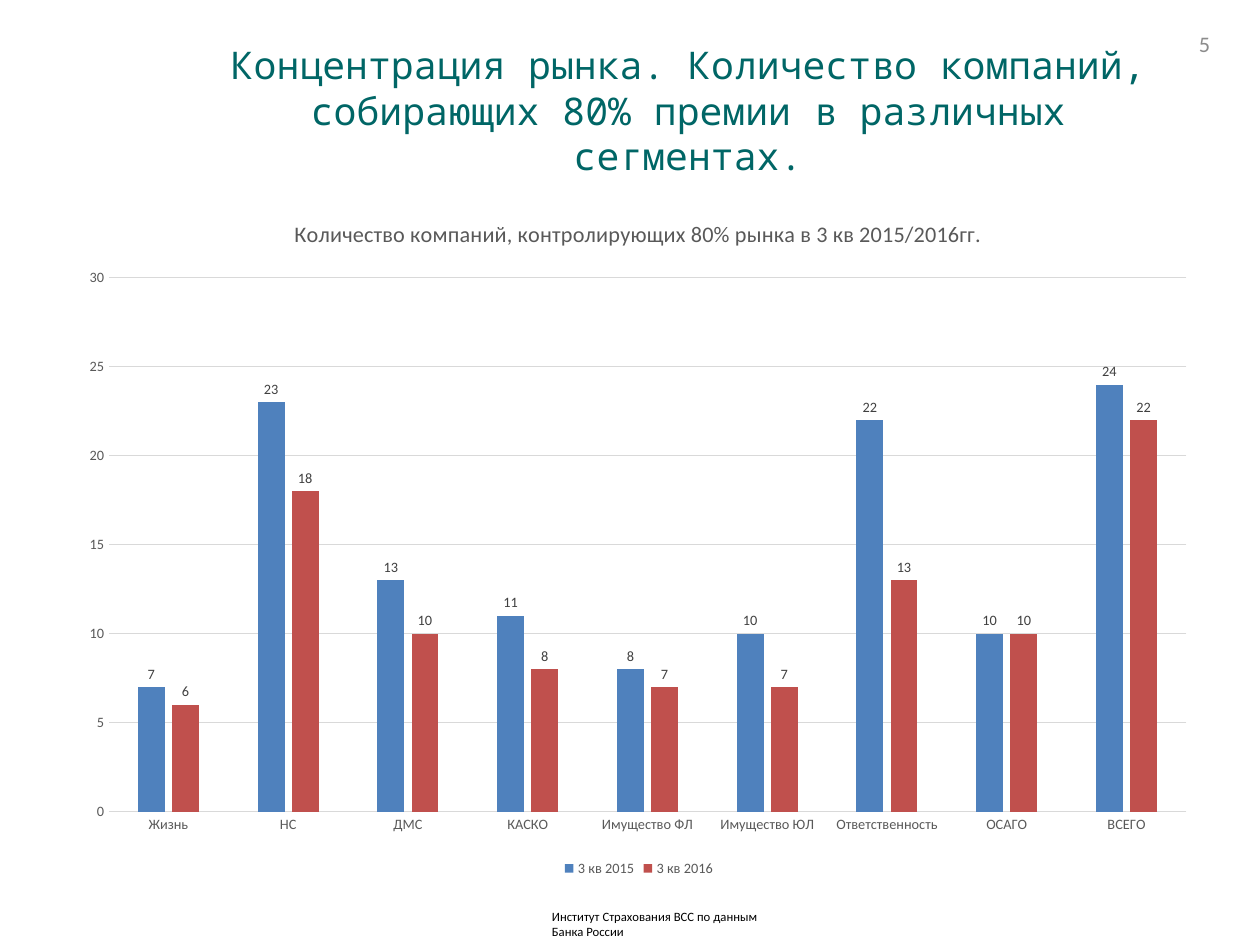
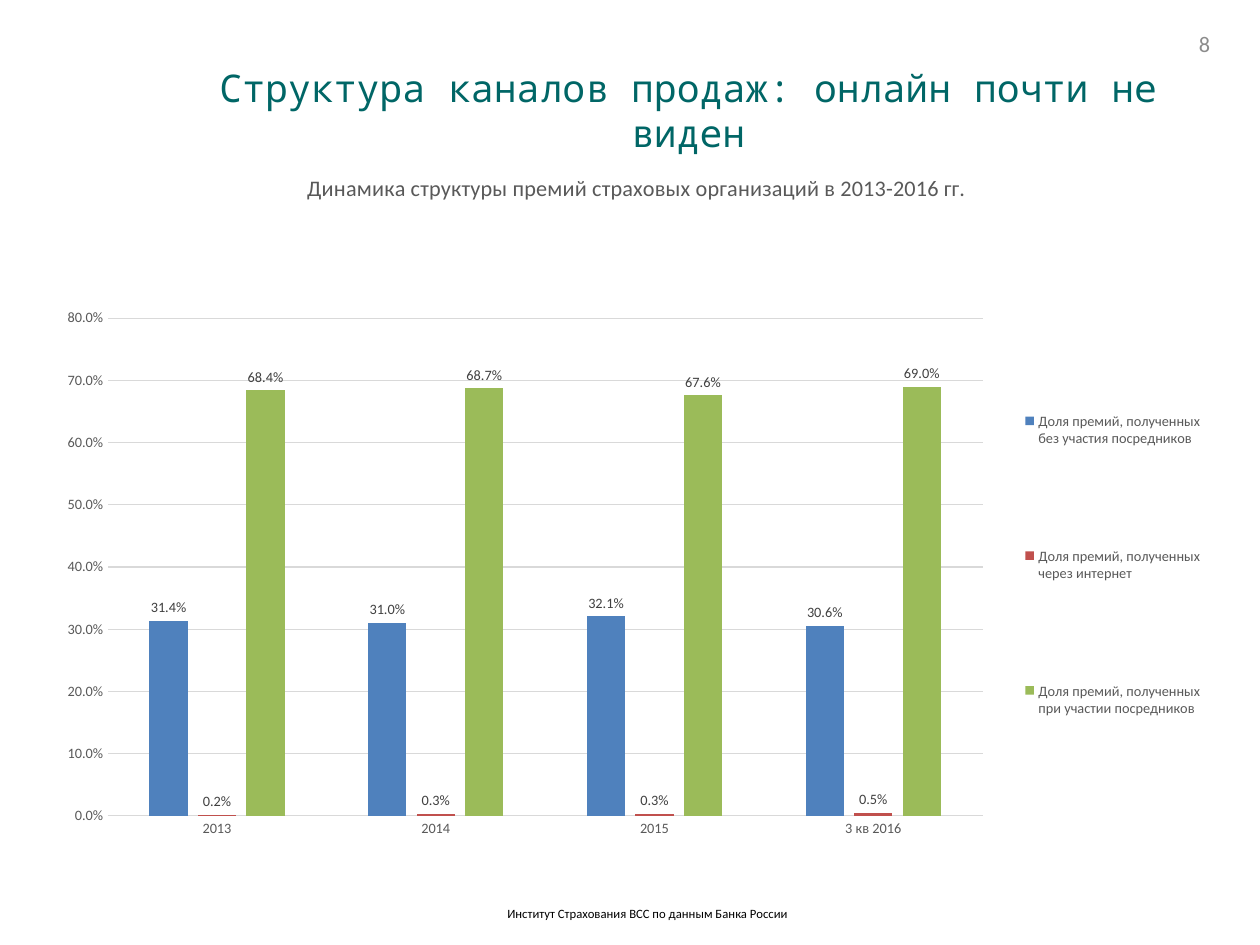
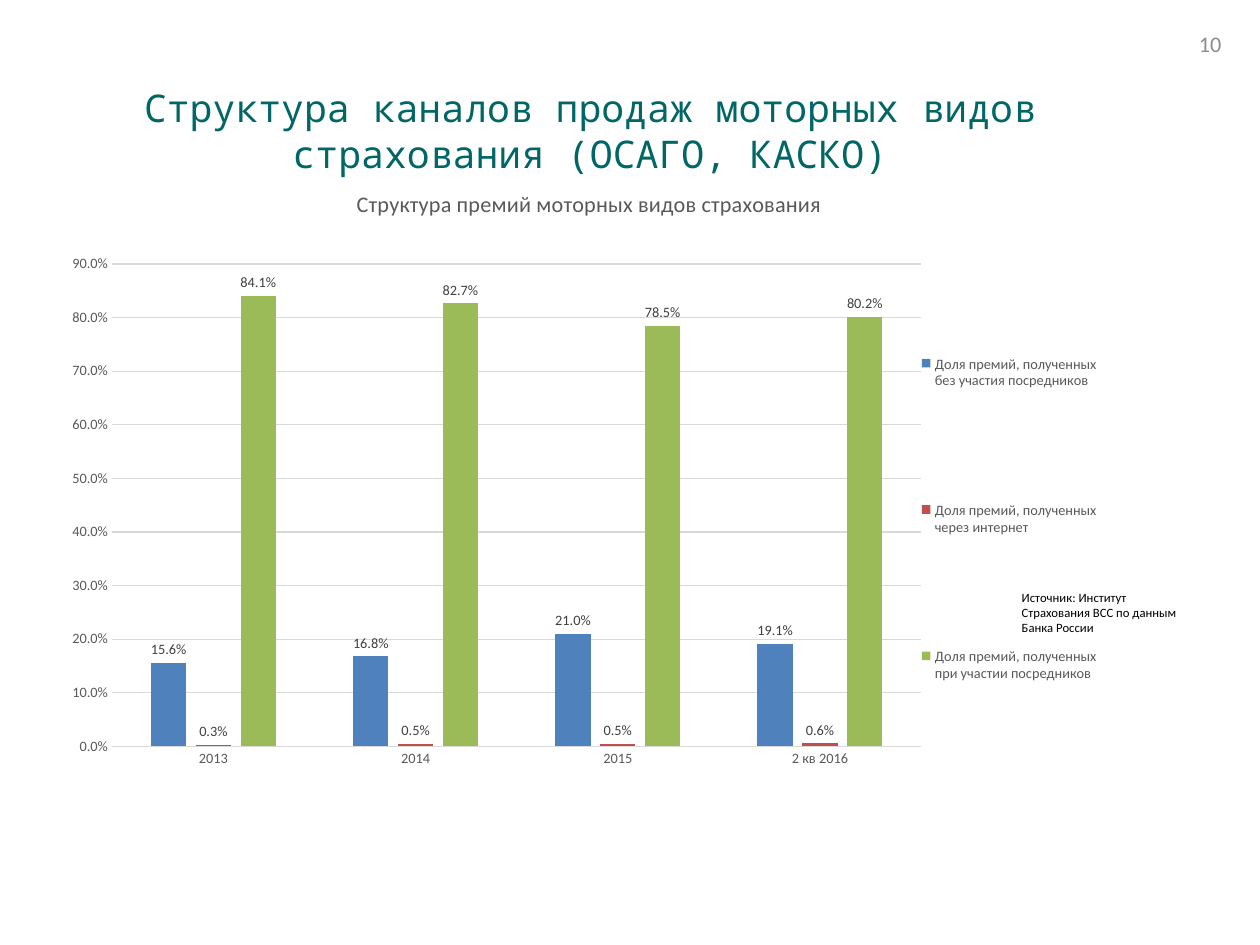
from dataclasses import dataclass

import pptx
import pptx.chart.data
import pptx.dml.color
import pptx.enum.chart
import pptx.enum.text
import pptx.oxml
import pptx.oxml.ns
import pptx.util
from pptx.util import Inches


@dataclass(frozen=True)
class Theme:
    title_font: str = "Noto Sans Mono"
    body_font: str = "Calibri"
    title_color: str = "006666"
    number_color: str = "8C8C8C"
    text_color: str = "000000"
    axis_color: str = "595959"
    label_color: str = "404040"
    grid_color: str = "D9D9D9"
    series_colors: tuple = ("4F81BD", "C0504D", "9BBB59")
    title_size: int = 24
    number_size: int = 14
    chart_title_size: int = 14
    chart_size: int = 10
    axis_size: int = 9
    source_size: int = 8
    line_width: float = 0.75


THEME = Theme()
MM_PER_INCH = 25.4
SLIDE_MM = (280, 210)
TITLE_BOX = (1.65, 0.27, 8.74, 1.38)
NUMBER_BOX = (10.39, 0.16, 0.63, 0.44)
SOURCE = "Институт Страхования ВСС по данным Банка России"
SHARES = [
    "Доля премий, полученных без участия посредников",
    "Доля премий, полученных через интернет",
    "Доля премий, полученных при участии посредников",
]

# Layout entries are fractions of the chart box: left, top[, width, height].
PAGES = [
    {
        "number": "5",
        "title": "Концентрация рынка. Количество компаний, собирающих 80% премии "
                 "в различных сегментах.",
        "title_box": TITLE_BOX,
        "source": SOURCE,
        "source_box": (4.73, 7.9, 2.05, 0.37),
        "chart_box": (0.59, 1.71, 10, 6),
        "chart_title": "Количество компаний, контролирующих 80% рынка в 3 кв 2015/2016гг.",
        "categories": ["Жизнь", "НС", "ДМС", "КАСКО", "Имущество ФЛ", "Имущество ЮЛ",
                       "Ответственность", "ОСАГО", "ВСЕГО"],
        "series": {
            "3 кв 2015": [7, 23, 13, 11, 8, 10, 22, 10, 24],
            "3 кв 2016": [6, 18, 10, 8, 7, 7, 13, 10, 22],
        },
        "format": "#,##0",
        "scale": (30, 5),
        "title_layout": (0.195, 0.028),
        "plot_layout": (0.036, 0.12, 0.943, 0.779),
        "legend_layout": None,
    },
    {
        "number": "8",
        "title": "Структура каналов продаж: онлайн почти не виден",
        "title_box": TITLE_BOX,
        "source": SOURCE,
        "source_box": (4.34, 7.88, 2.76, 0.24),
        "chart_box": (0.55, 1.3, 10.06, 6.51),
        "chart_title": "Динамика структуры премий страховых организаций в 2013-2016 гг.",
        "categories": ["2013", "2014", "2015", "3 кв 2016"],
        "series": dict(zip(SHARES, [
            [0.314, 0.31, 0.321, 0.306],
            [0.002, 0.003, 0.003, 0.005],
            [0.684, 0.687, 0.676, 0.69],
        ])),
        "format": "0.0%",
        "scale": (0.8, 0.1),
        "title_layout": (0.209, 0.027),
        "plot_layout": (0.039, 0.228, 0.761, 0.669),
        "legend_layout": (0.828, 0.22, 0.17, 0.68),
    },
    {
        "number": "10",
        "title": "Структура каналов продаж моторных видов страхования (ОСАГО, КАСКО)",
        "title_box": (0.79, 0.45, 8.74, 1.38),
        "source": "Источник: " + SOURCE,
        "source_box": (8.84, 5.11, 1.59, 0.5),
        "chart_box": (0.63, 1.46, 9.06, 5.75),
        "chart_title": "Структура премий моторных видов страхования",
        "categories": ["2013", "2014", "2015", "2 кв 2016"],
        "series": dict(zip(SHARES, [
            [0.156, 0.168, 0.21, 0.191],
            [0.003, 0.005, 0.005, 0.006],
            [0.841, 0.827, 0.785, 0.802],
        ])),
        "format": "0.0%",
        "scale": (0.9, 0.1),
        "title_layout": (0.271, 0.027),
        "plot_layout": (0.039, 0.148, 0.781, 0.734),
        "legend_layout": (0.81, 0.116, 0.19, 0.84),
    },
]


def rgb(color):
    return pptx.dml.color.RGBColor.from_string(color)


def style_font(font, size, color, name=THEME.body_font):
    font.name = name
    font.size = pptx.util.Pt(size)
    font.bold = False
    font.color.rgb = rgb(color)


def style_line(line):
    line.color.rgb = rgb(THEME.grid_color)
    line.width = pptx.util.Pt(THEME.line_width)


def add_text(slide, box, text, size, color, name=THEME.body_font,
             anchor=pptx.enum.text.MSO_ANCHOR.MIDDLE):
    """Add a wrapped one-paragraph text box and return its paragraph."""
    frame = slide.shapes.add_textbox(*map(Inches, box)).text_frame
    frame.word_wrap = True
    frame.vertical_anchor = anchor
    paragraph = frame.paragraphs[0]
    paragraph.text = text
    style_font(paragraph.font, size, color, name)
    return paragraph


def add_title(slide, box, text):
    paragraph = add_text(slide, box, text, THEME.title_size, THEME.title_color,
                         THEME.title_font)
    paragraph.alignment = pptx.enum.text.PP_ALIGN.CENTER


def place_part(element, layout, index, inner=False):
    """Give a chart part a manual layout, as child number index."""
    for old in element.findall(pptx.oxml.ns.qn("c:layout")):
        element.remove(old)
    settings = [("layoutTarget", "inner")] if inner else []
    settings += [("xMode", "edge"), ("yMode", "edge")]
    settings += zip("xywh", layout)
    children = "".join(f'<c:{tag} val="{value}"/>' for tag, value in settings)
    element.insert(index, pptx.oxml.parse_xml(
        f'<c:layout {pptx.oxml.ns.nsdecls("c")}>'
        f"<c:manualLayout>{children}</c:manualLayout></c:layout>"))


def style_axes(chart, number_format, scale):
    for axis in (chart.category_axis, chart.value_axis):
        axis.major_tick_mark = pptx.enum.chart.XL_TICK_MARK.NONE
        axis.minor_tick_mark = pptx.enum.chart.XL_TICK_MARK.NONE
        style_font(axis.tick_labels.font, THEME.axis_size, THEME.axis_color)
    style_line(chart.category_axis.format.line)
    value_axis = chart.value_axis
    value_axis.format.line.fill.background()
    value_axis.minimum_scale = 0
    value_axis.maximum_scale, value_axis.major_unit = scale
    style_line(value_axis.major_gridlines.format.line)
    value_axis.tick_labels.number_format = number_format
    value_axis.tick_labels.number_format_is_linked = False


def style_columns(plot, number_format):
    plot.gap_width = 219
    plot.overlap = -27
    plot.vary_by_categories = False
    for series, color in zip(plot.series, THEME.series_colors):
        series.format.fill.solid()
        series.format.fill.fore_color.rgb = rgb(color)
        series.invert_if_negative = False
        labels = series.data_labels
        labels.show_value = True
        labels.position = pptx.enum.chart.XL_LABEL_POSITION.OUTSIDE_END
        labels.number_format = number_format
        labels.number_format_is_linked = False
        style_font(labels.font, THEME.axis_size, THEME.label_color)


def add_legend(chart, layout):
    """Put the legend at the bottom, or at the right in the given layout."""
    positions = pptx.enum.chart.XL_LEGEND_POSITION
    chart.has_legend = True
    legend = chart.legend
    legend.position = positions.RIGHT if layout else positions.BOTTOM
    legend.include_in_layout = False
    style_font(legend.font, THEME.axis_size, THEME.axis_color)
    if layout:
        place_part(legend._element, layout, 1)


def add_column_chart(slide, box, page):
    data = pptx.chart.data.CategoryChartData(number_format=page["format"])
    data.categories = page["categories"]
    for name, values in page["series"].items():
        data.add_series(name, values)
    chart = slide.shapes.add_chart(
        pptx.enum.chart.XL_CHART_TYPE.COLUMN_CLUSTERED, *map(Inches, box), data).chart
    style_font(chart.font, THEME.chart_size, THEME.text_color)

    chart.has_title = True
    title = chart.chart_title
    paragraph = title.text_frame.paragraphs[0]
    paragraph.text = page["chart_title"]
    style_font(paragraph.font, THEME.chart_title_size, THEME.axis_color)
    place_part(title._element, page["title_layout"], 1)

    style_axes(chart, page["format"], page["scale"])
    style_columns(chart.plots[0], page["format"])
    add_legend(chart, page["legend_layout"])
    plot_area = chart._chartSpace.chart.plotArea
    place_part(plot_area, page["plot_layout"], 0, inner=True)


def add_chart_slide(presentation, page):
    slide = presentation.slides.add_slide(presentation.slide_layouts[6])
    add_title(slide, page["title_box"], page["title"])
    add_text(slide, NUMBER_BOX, page["number"], THEME.number_size, THEME.number_color)
    add_text(slide, page["source_box"], page["source"], THEME.source_size,
             THEME.text_color, anchor=pptx.enum.text.MSO_ANCHOR.TOP)
    add_column_chart(slide, page["chart_box"], page)


def main():
    presentation = pptx.Presentation()
    width, height = SLIDE_MM
    presentation.slide_width = Inches(width / MM_PER_INCH)
    presentation.slide_height = Inches(height / MM_PER_INCH)
    for page in PAGES:
        add_chart_slide(presentation, page)
    presentation.save("out.pptx")


if __name__ == "__main__":
    main()
